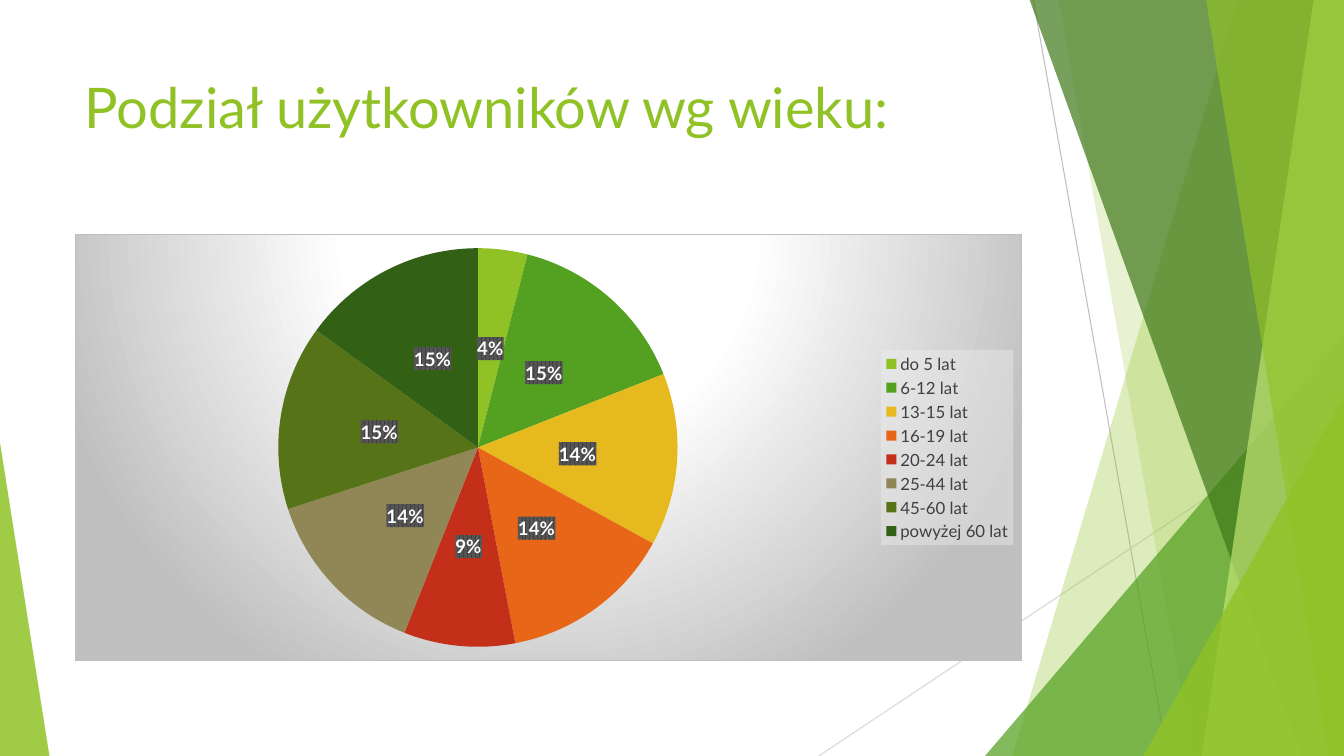
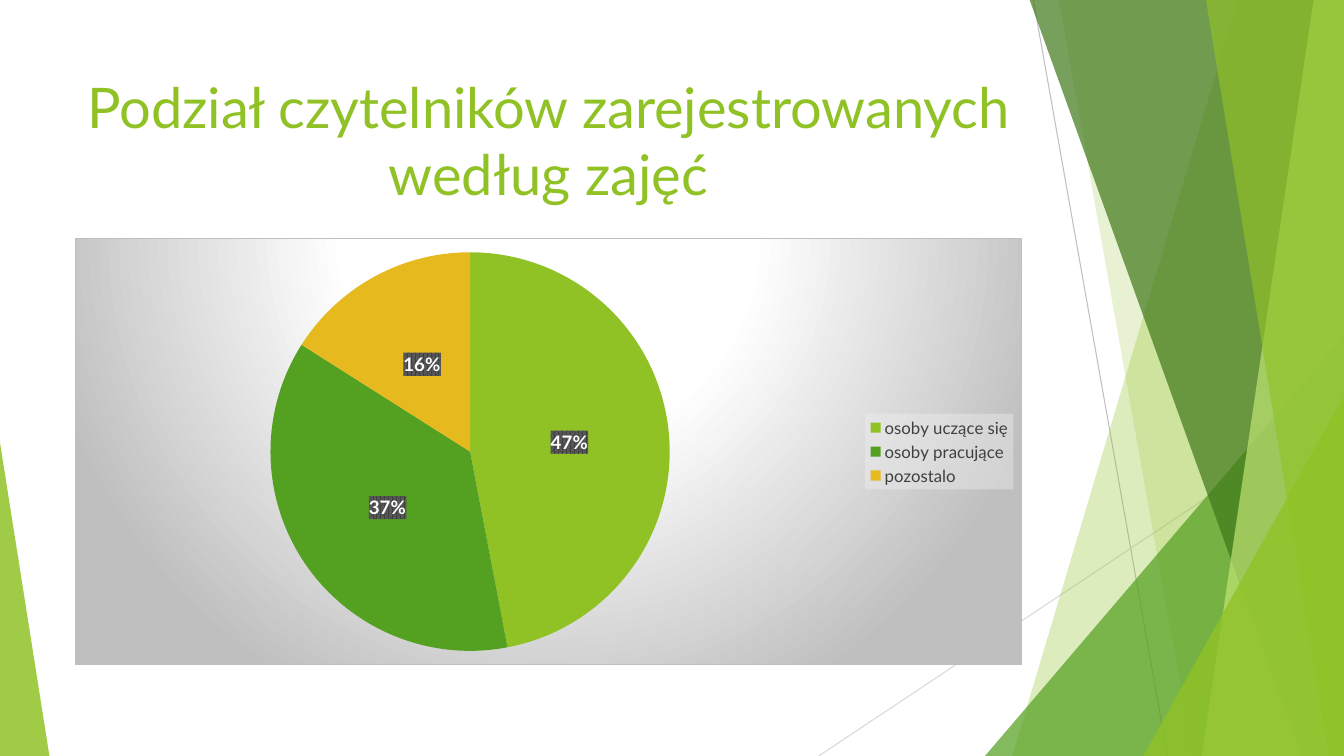
"""Two pie-chart slides on a shared faceted green layout."""
from dataclasses import dataclass

from lxml import etree
from pptx import Presentation
from pptx.chart.data import CategoryChartData
from pptx.dml.color import RGBColor
from pptx.enum.chart import XL_CHART_TYPE, XL_LABEL_POSITION, XL_LEGEND_POSITION
from pptx.enum.shapes import MSO_CONNECTOR, MSO_SHAPE, PP_PLACEHOLDER
from pptx.enum.text import MSO_ANCHOR, MSO_AUTO_SIZE, PP_ALIGN
from pptx.oxml import parse_xml
from pptx.oxml.ns import nsdecls, qn
from pptx.util import Inches, Pt

PIE = XL_CHART_TYPE.PIE
LABEL_CENTER = XL_LABEL_POSITION.CENTER
LEGEND_RIGHT = XL_LEGEND_POSITION.RIGHT
STRAIGHT = MSO_CONNECTOR.STRAIGHT
TRIANGLE = MSO_SHAPE.ISOSCELES_TRIANGLE
TITLE = PP_PLACEHOLDER.TITLE
TOP = MSO_ANCHOR.TOP
NO_AUTOFIT = MSO_AUTO_SIZE.NONE
LEFT, CENTER = PP_ALIGN.LEFT, PP_ALIGN.CENTER


@dataclass(frozen=True)
class Theme:
    """Colours, font and type sizes."""
    font: str = "Lato"
    lime: str = "90C226"
    green: str = "54A021"
    forest: str = "3F7819"
    pale: str = "C0E474"
    yellow: str = "E6B91E"
    orange: str = "E76618"
    red: str = "C42F1A"
    khaki: str = "918655"
    olive: str = "567417"
    moss: str = "326014"
    white: str = "FFFFFF"
    black: str = "000000"
    mist: str = "F2F2F2"
    silver: str = "D9D9D9"
    grey: str = "BFBFBF"
    slate: str = "595959"
    charcoal: str = "404040"
    title_size: float = 40
    chart_size: float = 10
    legend_size: float = 12
    label_size: float = 13.3
    hairline: float = 0.75

    def slices(self):
        """Return the pie colours in order."""
        return (self.lime, self.green, self.yellow, self.orange,
                self.red, self.khaki, self.olive, self.moss)

    def panel_fill(self):
        """Return the chart background and its border as XML."""
        stops = "".join(
            f'<a:gs pos="{pos * 1000}"><a:srgbClr val="{color}"/></a:gs>'
            for pos, color in ((0, self.white), (39, self.white), (100, self.grey)))
        return (f'<a:gradFill><a:gsLst>{stops}</a:gsLst><a:path path="circle">'
                '<a:fillToRect l="50000" t="-80000" r="50000" b="180000"/>'
                f'</a:path></a:gradFill><a:ln w="{Pt(self.hairline)}"><a:solidFill>'
                f'<a:srgbClr val="{self.grey}"/></a:solidFill></a:ln>')

    def legend_fill(self):
        """Return the translucent legend background as XML."""
        return (f'<a:solidFill><a:srgbClr val="{self.mist}">'
                '<a:alpha val="39000"/></a:srgbClr></a:solidFill>')

    def label_fill(self):
        """Return the patterned label background as XML."""
        return (f'<a:pattFill prst="pct75"><a:fgClr><a:srgbClr val="{self.charcoal}"/>'
                f'</a:fgClr><a:bgClr><a:srgbClr val="{self.slate}"/></a:bgClr></a:pattFill>')


class Deck:
    """Holds the style and current slide; lengths are percent of slide size."""

    def __init__(self, theme):
        """Start an empty widescreen presentation."""
        self.theme = theme
        self.prs = Presentation()
        self.prs.slide_width, self.prs.slide_height = Inches(13.33), Inches(7.5)
        self.layout = self.prs.slide_layouts.get_by_name("Title Only")
        self.slide = None
        self.clear_footers()

    def clear_footers(self):
        """Keep only the title on the shared layout."""
        for sp in list(self.layout.placeholders):
            if sp.placeholder_format.type != TITLE:
                self.layout.shapes.element.remove(sp.element)

    def x(self, share):
        """Convert a share of the width."""
        return round(self.prs.slide_width * share / 100)

    def y(self, share):
        """Convert a share of the height."""
        return round(self.prs.slide_height * share / 100)

    def box(self, left, top, width, height):
        """Convert a box given in shares."""
        return self.x(left), self.y(top), self.x(width), self.y(height)

    def add_slide(self):
        """Add a slide and make it current."""
        self.slide = self.prs.slides.add_slide(self.layout)

    def set_font(self, font, size, color, bold=False):
        """Apply the theme font."""
        font.name, font.size, font.bold = self.theme.font, Pt(size), bold
        font.color.rgb = RGBColor.from_string(color)

    def title(self, text, align):
        """Fill and place the title."""
        sp = self.slide.shapes.title
        sp.left, sp.top, sp.width, sp.height = self.box(5.55, 8.93, 70.52, 19.2)
        tf = sp.text_frame
        tf.text = text
        tf.word_wrap, tf.auto_size, tf.vertical_anchor = True, NO_AUTOFIT, TOP
        p = tf.paragraphs[0]
        p.alignment = align
        self.set_font(p.font, self.theme.title_size, self.theme.lime)

    def line(self, start, end, color):
        """Draw a hairline on the layout."""
        cxn = self.slide.shapes.add_connector(
            STRAIGHT, self.x(start[0]), self.y(start[1]), self.x(end[0]), self.y(end[1]))
        cxn.line.color.rgb = RGBColor.from_string(color)
        cxn.line.width = Pt(self.theme.hairline)
        etree.SubElement(cxn.element.spPr, qn("a:effectLst"))
        self.layout.shapes.element.append(cxn.element)

    def tint(self, sp, color, opacity):
        """Give a facet its translucent fill and move it to the layout."""
        sp.shadow.inherit = False
        sp.fill.solid()
        sp.fill.fore_color.rgb = RGBColor.from_string(color)
        sp.line.fill.background()
        clr = sp.element.xpath("./p:spPr/a:solidFill/a:srgbClr")[0]
        etree.SubElement(clr, qn("a:alpha"), val=str(opacity * 1000))
        self.layout.shapes.element.append(sp.element)

    def facet(self, top, bottom, color, opacity):
        """Draw a facet from a slanted left edge to the right of the slide."""
        high = self.y(-0.13)
        low, right = self.y(100), self.x(100)
        builder = self.slide.shapes.build_freeform(self.x(top), high)
        builder.add_line_segments([(right, high), (right, low), (self.x(bottom), low)])
        self.tint(builder.convert_to_shape(), color, opacity)

    def corner(self, left, top, width, apex, color, opacity):
        """Draw a triangle standing on the bottom edge."""
        sp = self.slide.shapes.add_shape(TRIANGLE, *self.box(left, top, width, 100 - top))
        sp.adjustments[0] = apex
        self.tint(sp, color, opacity)

    def decorate(self):
        """Put the facets on the shared layout."""
        t = self.theme
        self.line((76.89, 0), (86.87, 100), t.grey)
        self.line((100, 53.73), (60.92, 100), t.silver)
        self.facet(92.12, 75.32, t.lime, 30)
        self.facet(78.77, 88.75, t.lime, 20)
        self.corner(73.29, 44.4, 26.71, 1, t.green, 72)
        self.facet(76.59, 96.85, t.forest, 70)
        self.facet(97.75, 89.42, t.pale, 70)
        self.facet(89.72, 98.87, t.lime, 65)
        self.corner(85.07, 52.4, 14.93, 1, t.lime, 80)
        self.corner(0, 58.53, 3.68, 0, t.lime, 85)

    def backdrop(self, chart, parent, fill):
        """Insert a background into a chart part ahead of its text style."""
        xml = f'<c:spPr {nsdecls("c", "a")}>{fill}</c:spPr>'
        chart.element.xpath(f"{parent}/c:txPr")[0].addprevious(parse_xml(xml))

    def pie(self, top, shares):
        """Add a pie chart with percent labels and a legend."""
        t = self.theme
        data = CategoryChartData()
        data.categories = list(shares)
        data.add_series("Series 1", shares.values())
        chart = self.slide.shapes.add_chart(
            PIE, *self.box(5.55, top, 70.52, 56.53), data).chart
        self.set_font(chart.font, t.chart_size, t.black)
        chart.has_title = False
        chart.has_legend = True
        chart.legend.position = LEGEND_RIGHT
        chart.legend.include_in_layout = False
        self.set_font(chart.legend.font, t.legend_size, t.charcoal)
        plot = chart.plots[0]
        plot.vary_by_categories = True
        series = plot.series[0]
        for i, color in enumerate(t.slices()[:len(shares)]):
            fill = series.points[i].format.fill
            fill.solid()
            fill.fore_color.rgb = RGBColor.from_string(color)
        labels = series.data_labels
        labels.show_percentage, labels.show_value = True, False
        labels.number_format, labels.number_format_is_linked = "0%", False
        labels.position = LABEL_CENTER
        self.set_font(labels.font, t.label_size, t.white, bold=True)
        self.backdrop(chart, ".", t.panel_fill())
        self.backdrop(chart, ".//c:legend", t.legend_fill())
        self.backdrop(chart, ".//c:ser/c:dLbls", t.label_fill())


def main():
    """Build and save the presentation."""
    deck = Deck(Theme())
    deck.add_slide()
    deck.decorate()
    deck.title("Podział użytkowników wg wieku:", LEFT)
    deck.pie(30.93, {
        "do 5 lat": 4, "6-12 lat": 15, "13-15 lat": 14, "16-19 lat": 14,
        "20-24 lat": 9, "25-44 lat": 14, "45-60 lat": 15, "powyżej 60 lat": 15})
    deck.add_slide()
    deck.title("Podział czytelników zarejestrowanych według zajęć", CENTER)
    deck.pie(31.47, {"osoby uczące się": 47, "osoby pracujące": 37, "pozostalo": 16})
    deck.prs.save("out.pptx")


if __name__ == "__main__":
    main()
